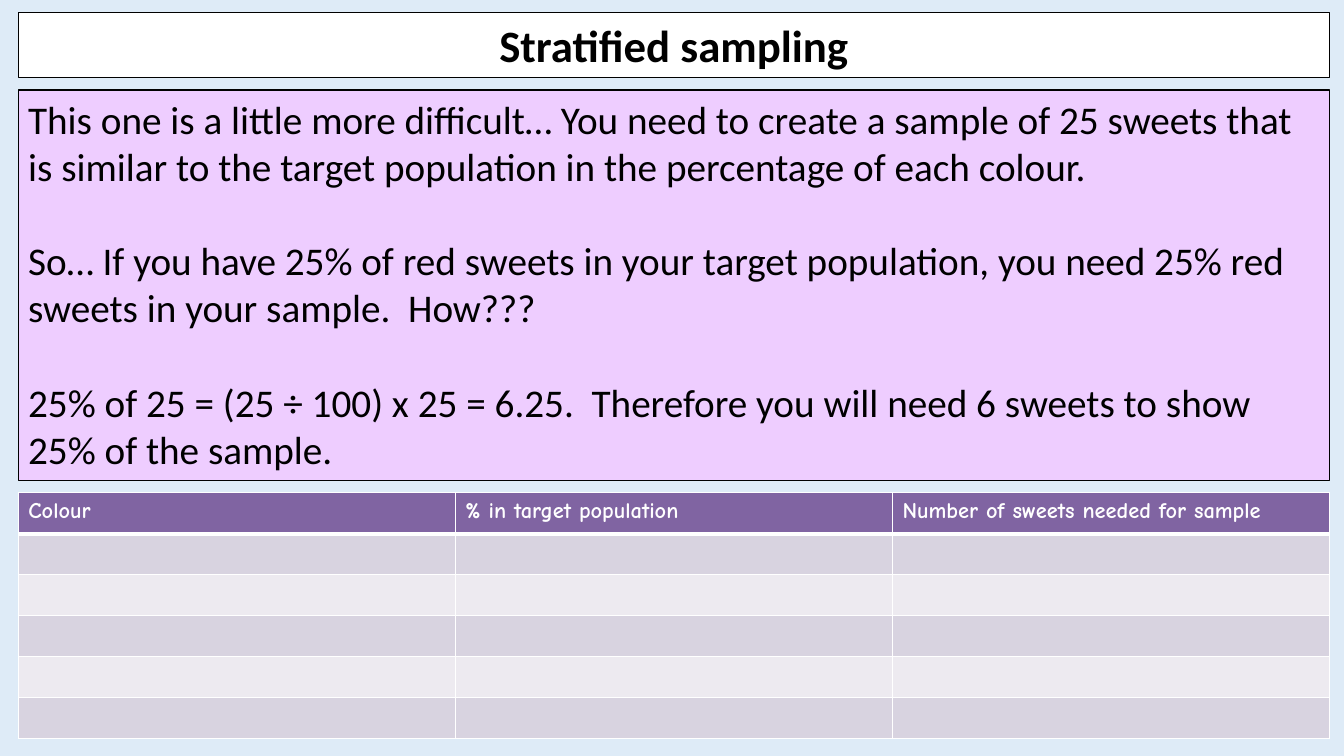
from pptx import Presentation
from pptx.dml.color import RGBColor
from pptx.enum.shapes import MSO_SHAPE
from pptx.enum.text import MSO_ANCHOR, PP_ALIGN
from pptx.oxml.ns import qn
from pptx.util import Cm, Pt
from lxml.etree import SubElement

COLOURS = {
    "background": "DEEBF7",
    "title": "FFFFFF",
    "explanation": "EECDFF",
    "text": "000000",
    "outline": "000000",
    "header": "8064A2",
    "header_text": "FFFFFF",
    "odd_row": "D8D3E0",
    "even_row": "EDEAF0",
    "border": "FFFFFF",
}
EXPLANATION = [
    "This one is a little more difficult… You need to create a sample of 25 sweets "
    "that is similar to the target population in the percentage of each colour.",
    "So… If you have 25% of red sweets in your target population, you need 25% red "
    "sweets in your sample.  How???",
    "25% of 25 = (25 ÷ 100) x 25 = 6.25.  Therefore you will need 6 sweets to show "
    "25% of the sample.",
]
HEADERS = ["Colour", "% in target population", "Number of sweets needed for sample"]
ROW_COUNT = 6

# Layout: three full-width regions stacked down the slide
LEFT, WIDTH = Cm(0.46), Cm(33.05)
TITLE_BOX = (LEFT, Cm(0.32), WIDTH, Cm(1.63))
EXPLANATION_BOX = (LEFT, Cm(2.27), WIDTH, Cm(9.84))
TABLE_BOX = (LEFT, Cm(12.42), WIDTH, Cm(6.18))


def colour(name):
    return RGBColor.from_string(COLOURS[name])


def style_font(paragraph, name, size, colour_name, bold=False):
    paragraph.font.name = name
    paragraph.font.size = Pt(size)
    paragraph.font.bold = bold
    paragraph.font.color.rgb = colour(colour_name)


def add_panel(slide, box, fill_name, texts, size, alignment, bold=False, gap=0):
    """Outlined rectangle with one paragraph per text."""
    shape = slide.shapes.add_shape(MSO_SHAPE.RECTANGLE, *box)
    shape.shadow.inherit = False
    shape.fill.solid()
    shape.fill.fore_color.rgb = colour(fill_name)
    shape.line.color.rgb = colour("outline")
    shape.line.width = Pt(1)
    frame = shape.text_frame
    frame.word_wrap = True
    frame.vertical_anchor = MSO_ANCHOR.TOP
    for index, text in enumerate(texts):
        paragraph = frame.add_paragraph() if index else frame.paragraphs[0]
        paragraph.text = text
        paragraph.alignment = alignment
        paragraph.space_before = Pt(gap if index else 0)
        style_font(paragraph, "Calibri", size, "text", bold)


def set_borders(cell, top, bottom):
    """White cell borders; top and bottom widths in points."""
    properties = cell._tc.get_or_add_tcPr()
    for side, width in (("L", 1), ("R", 1), ("T", top), ("B", bottom)):
        line = SubElement(properties, qn(f"a:ln{side}"), w=str(Pt(width)))
        fill = SubElement(line, qn("a:solidFill"))
        SubElement(fill, qn("a:srgbClr"), val=COLOURS["border"])


def add_sweets_table(slide, box):
    """Header row followed by empty banded rows to fill in."""
    left, top, width, height = box
    table = slide.shapes.add_table(ROW_COUNT, len(HEADERS), *box).table
    for column in table.columns:
        column.width = width // len(HEADERS)
    for row_index, row in enumerate(table.rows):
        row.height = height // ROW_COUNT
        band = "odd_row" if row_index % 2 else "even_row"
        for cell in row.cells:
            set_borders(cell, 3 if row_index == 1 else 1, 3 if row_index == 0 else 1)
            cell.fill.solid()
            cell.fill.fore_color.rgb = colour(band if row_index else "header")
    for cell, header in zip(table.rows[0].cells, HEADERS):
        cell.text = header
        style_font(cell.text_frame.paragraphs[0], "Comic Neue", 16, "header_text", True)


def main():
    presentation = Presentation()
    presentation.slide_width = Cm(33.87)
    presentation.slide_height = Cm(19.05)
    slide = presentation.slides.add_slide(presentation.slide_layouts[6])
    slide.background.fill.solid()
    slide.background.fill.fore_color.rgb = colour("background")

    add_panel(slide, TITLE_BOX, "title", ["Stratified sampling"], 32,
              PP_ALIGN.CENTER, bold=True)
    add_panel(slide, EXPLANATION_BOX, "explanation", EXPLANATION, 28,
              PP_ALIGN.LEFT, gap=34)
    add_sweets_table(slide, TABLE_BOX)
    presentation.save("out.pptx")


if __name__ == "__main__":
    main()
